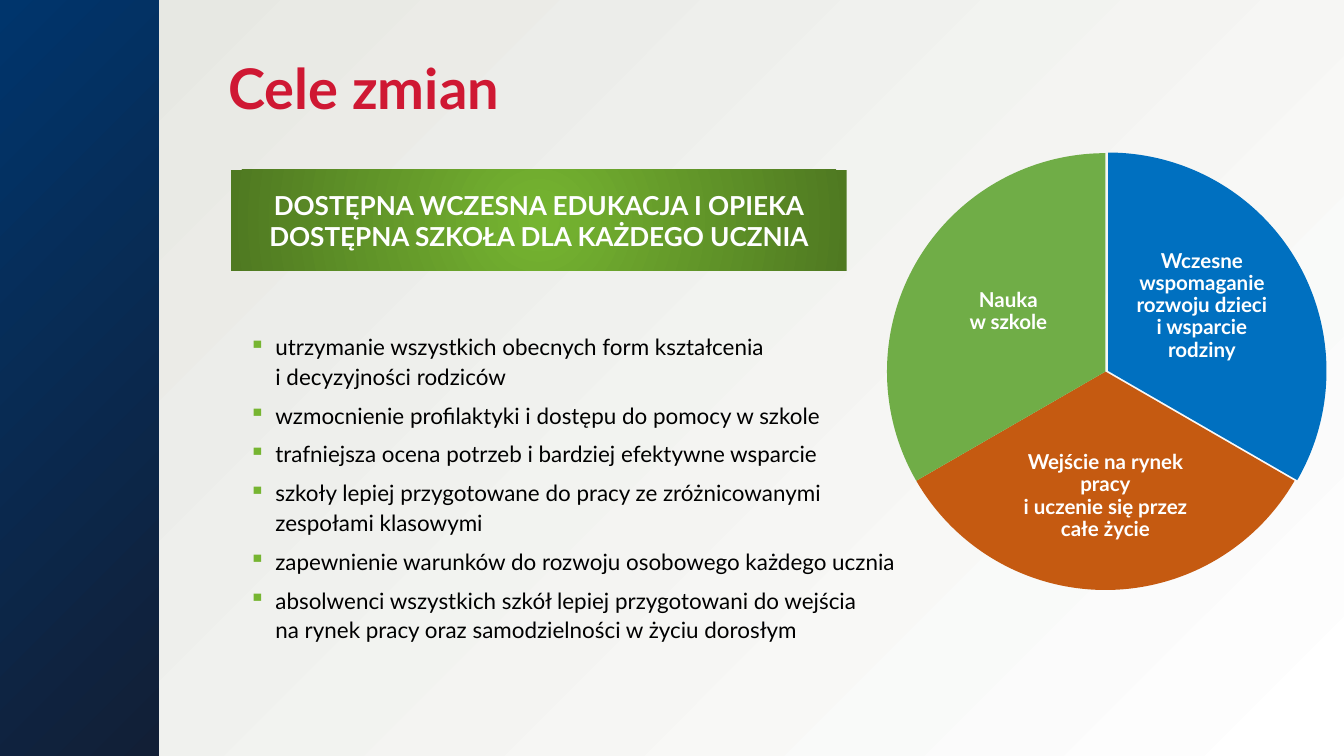
import pptx
import pptx.dml.color
import pptx.enum.shapes
import pptx.enum.text
import pptx.oxml
import pptx.oxml.ns
import pptx.util
from pptx.util import Inches

SHAPE = pptx.enum.shapes.MSO_SHAPE
ALIGN = pptx.enum.text.PP_ALIGN
ANCHOR = pptx.enum.text.MSO_ANCHOR


def rgb(value):
    return pptx.dml.color.RGBColor.from_string(value)


def apply(target, values):
    for name, value in values.items():
        setattr(target, name, value)


class SlideBuilder:
    FONT = "Lato"
    WHITE = "FFFFFF"
    RED = "CF1833"
    GREEN = "76B531"
    CORNER = (100, 100, 0, 0)
    CENTRE = (50, 50, 50, 50)

    def __init__(self, slide):
        self.slide = slide

    def place(self, shape, box):
        apply(shape, dict(zip(("left", "top", "width", "height"), map(Inches, box))))

    def gradient(self, fill, owner, colours, focus):
        fill.gradient()
        for stop, colour, position in zip(fill.gradient_stops, colours, (0, 1)):
            stop.color.rgb = rgb(colour)
            stop.position = position
        gradient = owner.xpath(".//a:gradFill")[0]
        for linear in gradient.xpath("./a:lin"):
            gradient.remove(linear)
        left, top, right, bottom = (edge * 1000 for edge in focus)
        gradient.append(pptx.oxml.parse_xml(
            f'<a:path {pptx.oxml.ns.nsdecls("a")} path="circle">'
            f'<a:fillToRect l="{left}" t="{top}" r="{right}" b="{bottom}"/></a:path>'))

    def background(self, colours):
        fill = self.slide.background.fill
        self.gradient(fill, self.slide.element, colours, self.CORNER)

    def shape(self, kind, box):
        shape = self.slide.shapes.add_shape(kind, *map(Inches, box))
        shape.shadow.inherit = False
        shape.line.fill.background()
        return shape

    def panel(self, box, colours, focus):
        panel = self.shape(SHAPE.RECTANGLE, box)
        self.gradient(panel.fill, panel.element, colours, focus)
        return panel

    def sector(self, box, start, end, colour):
        sector = self.shape(SHAPE.PIE, box)
        for index, degrees in enumerate((start, end)):
            sector.adjustments[index] = degrees * 0.6
        sector.fill.solid()
        sector.fill.fore_color.rgb = rgb(colour)

    def fill_text(self, shape, texts, size, colour, bold=True, anchor=ANCHOR.MIDDLE,
                  inset=None, **paragraph_format):
        frame = shape.text_frame
        apply(frame, {"word_wrap": True, "vertical_anchor": anchor,
                      "auto_size": pptx.enum.text.MSO_AUTO_SIZE.NONE})
        if inset is not None:
            apply(frame, {f"margin_{side}": Inches(inset)
                          for side in ("left", "top", "right", "bottom")})
        for index, text in enumerate(texts):
            paragraph = frame.add_paragraph() if index else frame.paragraphs[0]
            paragraph.text = text
            apply(paragraph, paragraph_format)
            for run in paragraph.runs:
                apply(run.font, {"name": self.FONT, "size": pptx.util.Pt(size), "bold": bold})
                run.font.color.rgb = rgb(colour)
        return frame.paragraphs

    def title(self, text, box):
        title = self.slide.shapes.title
        self.place(title, box)
        self.fill_text(title, [text], 60, self.RED, alignment=ALIGN.LEFT,
                       space_before=pptx.util.Pt(30))

    def label(self, text, box):
        label = self.slide.shapes.add_textbox(*map(Inches, box))
        self.fill_text(label, [text], 22, self.WHITE, inset=0.03,
                       alignment=ALIGN.CENTER, line_spacing=0.9)

    def bullets(self, texts, box):
        bullets = self.slide.shapes.add_textbox(*map(Inches, box))
        paragraphs = self.fill_text(bullets, texts, 24, "000000", bold=False,
                                    anchor=ANCHOR.TOP, line_spacing=1.1,
                                    space_before=pptx.util.Pt(10))
        namespace = pptx.oxml.ns.nsdecls("a")
        indent = Inches(0.39)
        for paragraph in paragraphs:
            properties = paragraph._p.get_or_add_pPr()
            properties.set("marL", str(indent))
            properties.set("indent", str(-indent))
            for xml in (f'<a:buClr {namespace}><a:srgbClr val="{self.GREEN}"/></a:buClr>',
                        f'<a:buChar {namespace} char="▪"/>'):
                properties.append(pptx.oxml.parse_xml(xml))


def main():
    presentation = pptx.Presentation()
    apply(presentation, {"slide_width": Inches(20), "slide_height": Inches(11.25)})
    builder = SlideBuilder(presentation.slides.add_slide(presentation.slide_layouts[5]))

    builder.background(("FFFFFF", "E5E6E1"))
    builder.panel((0, 0, 2.36, 11.25), ("121F36", "00356C"), builder.CORNER)
    builder.title("Cele zmian", (3.3, 0, 12.45, 2.58))

    diameter = 6.5
    stages = [
        ("Wczesne wspomaganie rozwoju dzieci\vi wsparcie rodziny", "0070C0",
         (13.24, 2.27), 270, 30, (16.78, 3.47, 2.21, 2.17)),
        ("Wejście na rynek pracy\vi uczenie się przez całe życie", "C55A11",
         (13.2, 2.28), 30, 150, (14.98, 6.38, 2.94, 2.01)),
        ("Nauka\vw szkole", "70AD47",
         (13.2, 2.28), 150, 270, (13.9, 3.56, 2.21, 2.17)),
    ]
    for text, colour, corner, start, end, label_box in stages:
        builder.sector((*corner, diameter, diameter), start, end, colour)
        builder.label(text, label_box)

    builder.bullets([
        "utrzymanie wszystkich obecnych form kształcenia\vi decyzyjności rodziców",
        "wzmocnienie profilaktyki i dostępu do pomocy w szkole",
        "trafniejsza ocena potrzeb i bardziej efektywne wsparcie",
        "szkoły lepiej przygotowane do pracy ze zróżnicowanymi\vzespołami klasowymi",
        "zapewnienie warunków do rozwoju osobowego każdego ucznia",
        "absolwenci wszystkich szkół lepiej przygotowani do wejścia\v"
        "na rynek pracy oraz samodzielności w życiu dorosłym",
    ], (3.61, 4.87, 10.37, 5.61))

    slogan = builder.panel((3.44, 2.53, 9.16, 1.5), (builder.GREEN, "4F7921"), builder.CENTRE)
    builder.fill_text(slogan, ["DOSTĘPNA WCZESNA EDUKACJA I OPIEKA",
                               "DOSTĘPNA SZKOŁA DLA KAŻDEGO UCZNIA"],
                      28, builder.WHITE, alignment=ALIGN.CENTER)

    presentation.save("out.pptx")


if __name__ == "__main__":
    main()
